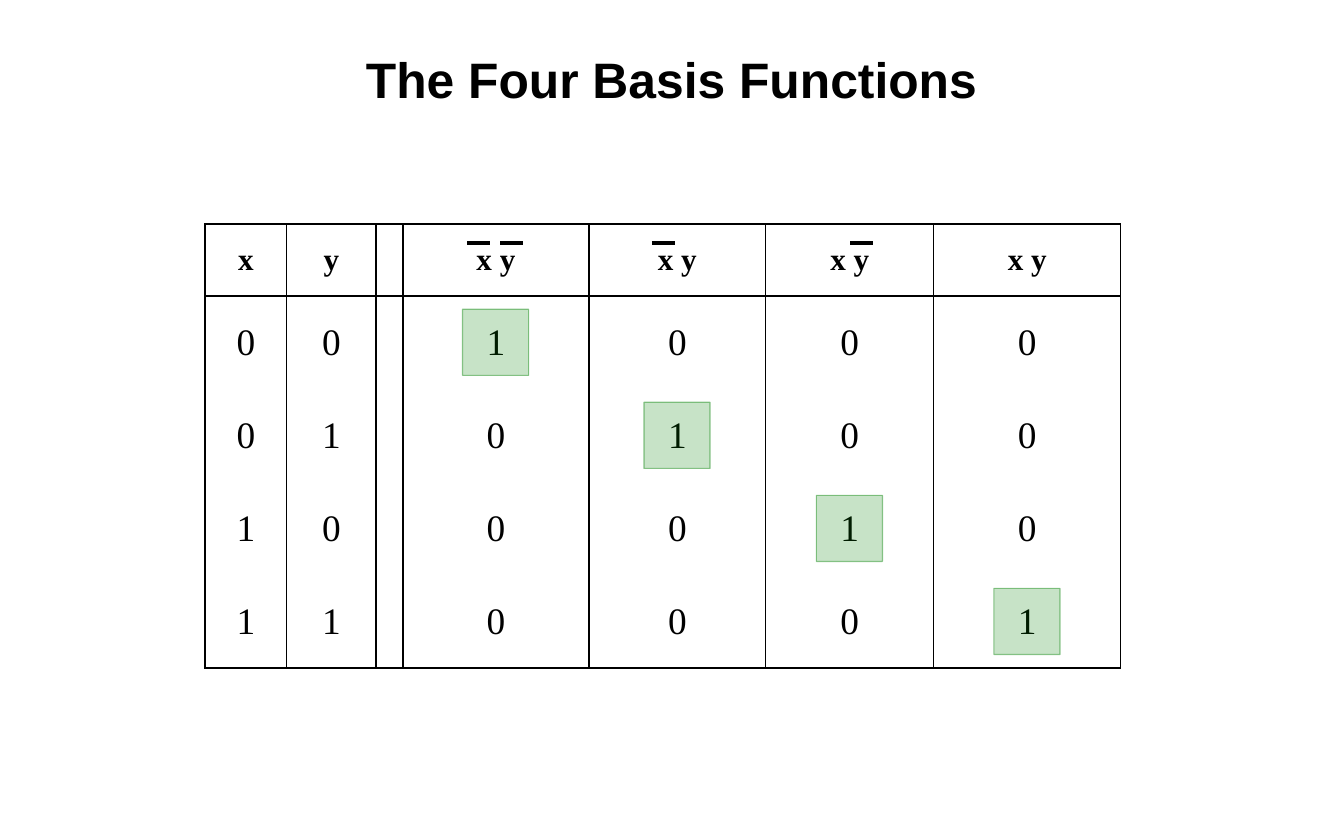
import itertools

import pptx
import pptx.dml.color
import pptx.enum.shapes
import pptx.enum.text
import pptx.oxml
import pptx.oxml.ns
import pptx.util
from pptx.util import Cm, Pt

BLACK, GREEN = "000000", "008000"
COLUMN_WIDTHS = [1.85, 2.03, 0.6, 4.22, 4.01, 3.81, 4.24]
ROW_HEIGHTS = [1.63] + [2.11] * 4
FIRST_FUNCTION = 3  # column of the first basis function
HEADINGS = ["x", "y", "", "x y", "x y", "x y", "x y"]
INPUTS = list(itertools.product((0, 1), repeat=2))
# Negation bars: column and offset of the bar's centre from the column's centre
BARS = [(3, -0.38), (3, 0.37), (4, -0.31), (5, 0.28)]
BAR_WIDTH, BAR_TOP, SQUARE = 0.52, 0.43, 1.5


def color(value):
    return pptx.dml.color.RGBColor.from_string(value)


def add_text(frame, text, font, size, bold, space_before=0):
    frame.vertical_anchor = pptx.enum.text.MSO_ANCHOR.MIDDLE
    para = frame.paragraphs[0]
    para.alignment = pptx.enum.text.PP_ALIGN.CENTER
    para.space_before = Pt(space_before)
    span = para.add_run()
    span.text = text
    span.font.name, span.font.size, span.font.bold = font, Pt(size), bold
    span.font.color.rgb = color(BLACK)


def set_borders(cell, sides):
    """Draw the named sides (from L, R, T, B) and clear the others."""
    properties = cell._tc.get_or_add_tcPr()
    for index, side in enumerate("LRTB"):
        paint = (f'<a:solidFill><a:srgbClr val="{BLACK}"/></a:solidFill>'
                 if side in sides else "<a:noFill/>")
        properties.insert(index, pptx.oxml.parse_xml(
            f'<a:ln{side} {pptx.oxml.ns.nsdecls("a")} w="{Pt(1)}">{paint}</a:ln{side}>'))


def set_opacity(fill, percent):
    shade = fill._xPr.find(".//" + pptx.oxml.ns.qn("a:srgbClr"))
    shade.append(pptx.oxml.parse_xml(
        f'<a:alpha {pptx.oxml.ns.nsdecls("a")} val="{percent * 1000}"/>'))


def add_title(page, left, top, width, height):
    box = page.shapes.add_textbox(Cm(left), Cm(top), Cm(width), Cm(height))
    box.text_frame.word_wrap = True
    add_text(box.text_frame, "The Four Basis Functions", "Arial", 32, True)


def add_truth_table(page, left, top):
    table = page.shapes.add_table(
        len(ROW_HEIGHTS), len(COLUMN_WIDTHS), Cm(left), Cm(top),
        Cm(sum(COLUMN_WIDTHS)), Cm(sum(ROW_HEIGHTS))).table
    table.first_row = table.horz_banding = False
    for column, width in zip(table.columns, COLUMN_WIDTHS):
        column.width = Cm(width)
    for row, height in zip(table.rows, ROW_HEIGHTS):
        row.height = Cm(height)

    # Each basis function is 1 for exactly one pair of inputs
    rows = [HEADINGS]
    for number, (x, y) in enumerate(INPUTS):
        outputs = [int(number == function) for function in range(len(INPUTS))]
        rows.append([x, y, "", *outputs])

    last = len(rows) - 1
    sides = {0: "LRTB", 1: "LRT", last: "LRB"}
    for r, values in enumerate(rows):
        size, space_before = (20, 6) if r == 0 else (24, 12)
        for c, value in enumerate(values):
            cell = table.cell(r, c)
            cell.fill.background()
            set_borders(cell, sides.get(r, "LR"))
            if value != "":
                add_text(cell.text_frame, str(value), "Times New Roman",
                         size, r == 0, space_before)
                cell.vertical_anchor = pptx.enum.text.MSO_ANCHOR.MIDDLE


def column_center(left, column):
    return left + sum(COLUMN_WIDTHS[:column]) + COLUMN_WIDTHS[column] / 2


def add_highlights(page, left, top):
    """Put a square over the single 1 of each basis function."""
    for number in range(len(INPUTS)):
        row = number + 1
        center_x = column_center(left, FIRST_FUNCTION + number)
        center_y = top + sum(ROW_HEIGHTS[:row]) + ROW_HEIGHTS[row] / 2
        square = page.shapes.add_shape(
            pptx.enum.shapes.MSO_SHAPE.RECTANGLE,
            Cm(center_x - SQUARE / 2), Cm(center_y - SQUARE / 2),
            Cm(SQUARE), Cm(SQUARE))
        square.shadow.inherit = False
        square.line.width = Pt(0.75)
        for fill, opacity in ((square.fill, 22), (square.line.fill, 43)):
            fill.solid()
            fill.fore_color.rgb = color(GREEN)
            set_opacity(fill, opacity)


def add_negation_bars(page, left, top):
    for column, offset in BARS:
        start = column_center(left, column) + offset - BAR_WIDTH / 2
        height = Cm(top + BAR_TOP)
        bar = page.shapes.add_connector(
            pptx.enum.shapes.MSO_CONNECTOR.STRAIGHT,
            Cm(start), height, Cm(start + BAR_WIDTH), height)
        bar.line.color.rgb = color(BLACK)
        bar.line.width = Pt(3)
        bar._element.spPr.append(pptx.oxml.parse_xml(
            f'<a:effectLst {pptx.oxml.ns.nsdecls("a")}/>'))


def main():
    deck = pptx.Presentation()
    deck.slide_width, deck.slide_height = Cm(30.48), Cm(19.05)
    page = deck.slides.add_slide(deck.slide_layouts[6])

    add_title(page, 0, 0.84, 30.48, 1.9)

    # Truth table with its marks
    left, top = 4.65, 5.08
    add_truth_table(page, left, top)
    add_highlights(page, left, top)
    add_negation_bars(page, left, top)

    deck.save("out.pptx")


if __name__ == "__main__":
    main()
